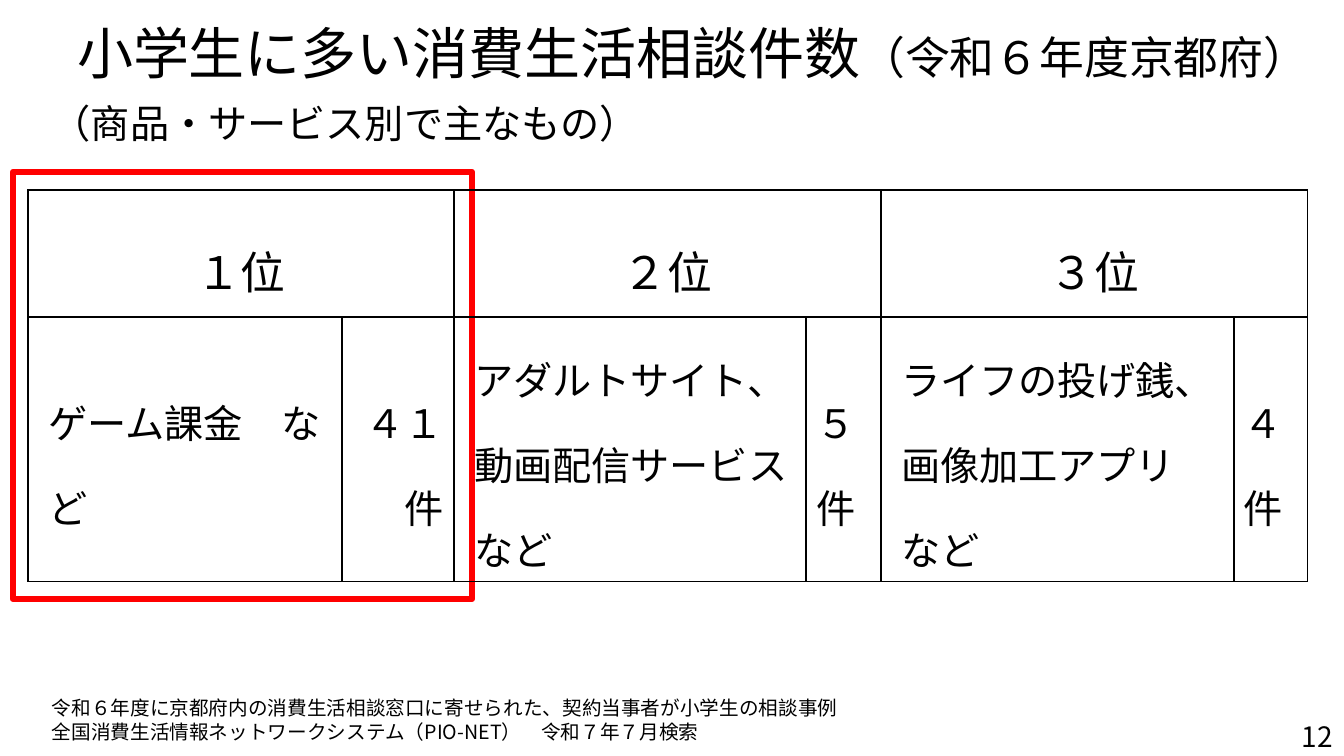
"""Build the slide on consumer consultations among primary school pupils."""
from lxml import etree
from pptx import Presentation
from pptx import util as u
from pptx.dml.color import RGBColor
from pptx.enum import shapes, text
from pptx.oxml.ns import qn

BLACK = RGBColor(0, 0, 0)
RED = RGBColor(255, 0, 0)
FONT = "Noto Sans CJK JP"
SCALE = 914400 / 100.8
ALIGN = text.PP_ALIGN


def px(*lengths):
    """Turn pixel lengths into EMU."""
    return [u.Emu(round(length * SCALE)) for length in lengths]


def write(paragraph, words, size, alignment=ALIGN.LEFT):
    """Add one formatted run to an aligned paragraph."""
    paragraph.alignment = alignment
    run = paragraph.add_run()
    run.text = words
    run.font.size = u.Pt(size)
    run.font.bold = False
    run.font.name = FONT
    run.font.color.rgb = BLACK
    east_asian = etree.SubElement(run.font._element, qn("a:ea"))
    east_asian.set("typeface", FONT)


presentation = Presentation()
presentation.slide_width, presentation.slide_height = px(1344, 756)
slide = presentation.slides.add_slide(presentation.slide_layouts[5])

title = slide.shapes.title
title.left, title.top, title.width, title.height = px(67, 30, 1277, 126)
title.text_frame.auto_size = text.MSO_AUTO_SIZE.NONE
title.text_frame.vertical_anchor = text.MSO_ANCHOR.MIDDLE
heading = title.text_frame.paragraphs[0]
heading.line_spacing = 0.9
write(heading, "小学生に多い消費生活相談件数", 40)
write(heading, "（令和６年度京都府）", 32)
heading.add_line_break()

highlight = slide.shapes.add_shape(shapes.MSO_SHAPE.RECTANGLE, *px(13, 172, 459, 427))
highlight.shadow.inherit = False
highlight.fill.background()
highlight.line.color.rgb = RED
highlight.line.width = u.Pt(4.5)

column_widths = px(314, 112, 352, 75, 353, 74)
row_heights = px(127, 232)
frame = slide.shapes.add_table(2, 6, *px(28, 190, 1280, 359))
table = frame.table
table.first_row = False
table.horz_banding = False
for column, width in zip(table.columns, column_widths):
    column.width = width
for row, height in zip(table.rows, row_heights):
    row.height = height

for cell in table.iter_cells():
    cell.vertical_anchor = text.MSO_ANCHOR.MIDDLE
    properties = cell._tc.get_or_add_tcPr()
    for side in ("a:lnL", "a:lnR", "a:lnT", "a:lnB"):
        border = etree.SubElement(properties, qn(side), w=str(u.Pt(1)))
        fill = etree.SubElement(border, qn("a:solidFill"))
        etree.SubElement(fill, qn("a:srgbClr"), val=str(BLACK))
    cell.fill.background()

rankings = [
    ("１位", ["ゲーム課金　など"], "４１件", "marL", ALIGN.RIGHT),
    ("２位", ["アダルトサイト、", "動画配信サービス", "など"], "５件", "indent", ALIGN.LEFT),
    ("３位", ["ライフの投げ銭、", "画像加工アプリ　", "など"], "４件", "indent", ALIGN.LEFT),
]
for index, (rank, products, count, indent, count_alignment) in enumerate(rankings):
    left = 2 * index
    table.cell(0, left).merge(table.cell(0, left + 1))
    entries = [
        (table.cell(0, left), [rank], 32, ALIGN.CENTER),
        (table.cell(1, left), products, 28, ALIGN.LEFT),
        (table.cell(1, left + 1), [count], 28, count_alignment),
    ]
    for cell, lines, size, alignment in entries:
        for number, line in enumerate(lines):
            body = cell.text_frame
            paragraph = body.add_paragraph() if number else body.paragraphs[0]
            paragraph.line_spacing = 1.5
            write(paragraph, line, size, alignment)
            if lines is products:
                paragraph._p.get_or_add_pPr().set(indent, str(px(10)[0]))

source_lines = [
    "令和６年度に京都府内の消費生活相談窓口に寄せられた、契約当事者が小学生の相談事例",
    "全国消費生活情報ネットワークシステム（PIO-NET）　令和７年７月検索",
]
FIT, FIXED = text.MSO_AUTO_SIZE.SHAPE_TO_FIT_TEXT, text.MSO_AUTO_SIZE.NONE
TOP, MIDDLE = text.MSO_ANCHOR.TOP, text.MSO_ANCHOR.MIDDLE
notes = [
    ((42, 691, 1241, 57), source_lines, 14, ALIGN.JUSTIFY, FIT, TOP),
    ((42, 94, 968, 57), ["（商品・サービス別で主なもの）"], 28, ALIGN.LEFT, FIT, TOP),
    ((1041, 716, 302, 40), ["12"], 20, ALIGN.RIGHT, FIXED, MIDDLE),
]
for place, lines, size, alignment, sizing, anchor in notes:
    body = slide.shapes.add_textbox(*px(*place)).text_frame
    body.word_wrap = True
    body.auto_size = sizing
    body.vertical_anchor = anchor
    for number, line in enumerate(lines):
        paragraph = body.add_paragraph() if number else body.paragraphs[0]
        write(paragraph, line, size, alignment)

presentation.save("out.pptx")
